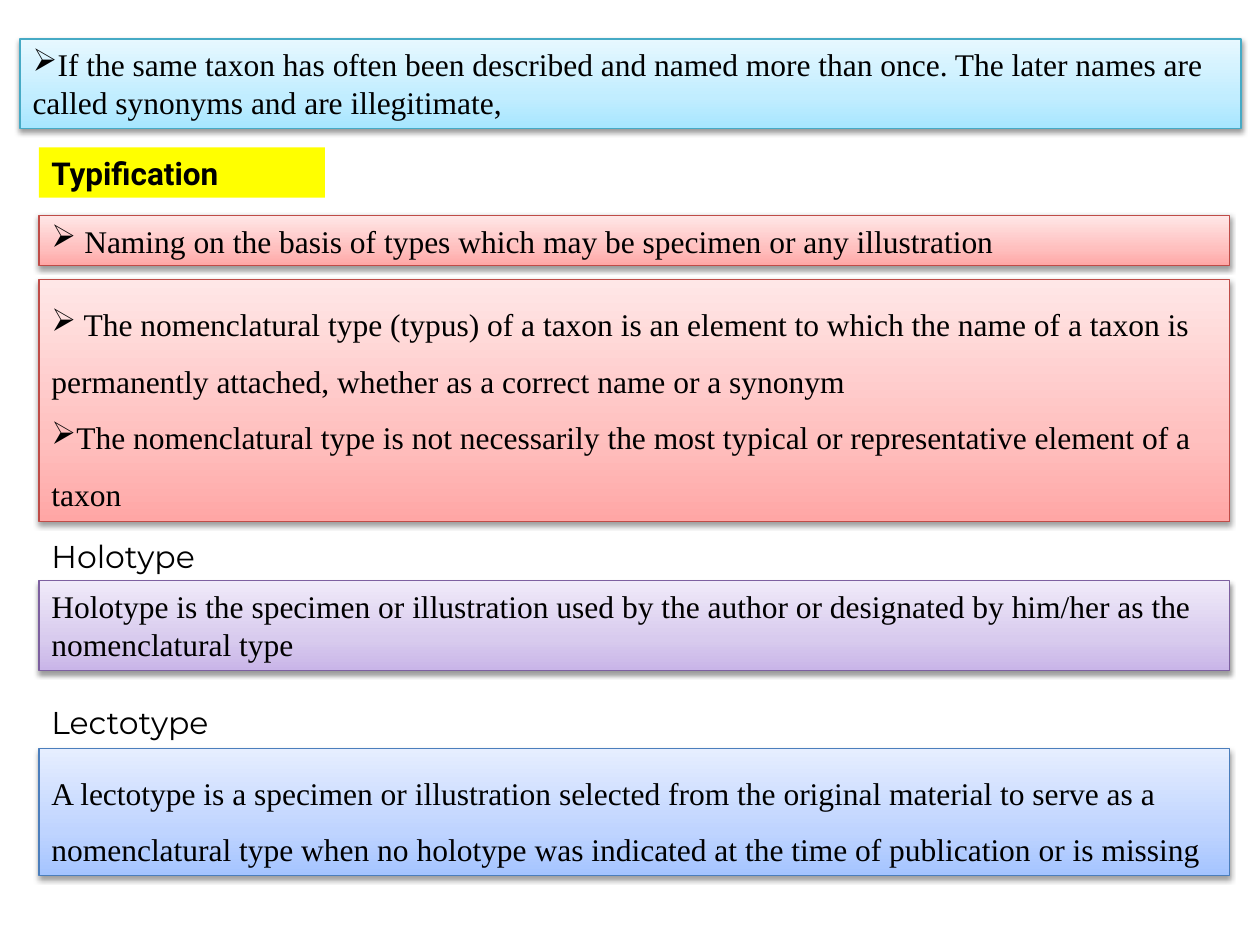
from copy import deepcopy

from lxml import etree
from pptx import Presentation
from pptx.dml.color import RGBColor
from pptx.enum.shapes import MSO_SHAPE
from pptx.enum.text import MSO_ANCHOR, MSO_AUTO_SIZE, PP_ALIGN
from pptx.oxml.ns import qn
from pptx.util import Inches, Pt

RECTANGLE = MSO_SHAPE.RECTANGLE
TOP = MSO_ANCHOR.TOP
LEFT = PP_ALIGN.LEFT
GROW = MSO_AUTO_SIZE.SHAPE_TO_FIT_TEXT

BODY_FONT = "Times New Roman"
HEADING_FONT = "Montserrat"
STOP_POSITIONS = (0, 0.35, 1)
MARGIN = 0.31
BOX_WIDTH = 9.45

CYAN = ("46AAC5", ("A7E6FF", "C1EDFF", "E7F8FF"))
RED = ("BF4C48", ("FFA6A5", "FFC0BF", "FFE7E7"))
PURPLE = ("7D60A0", ("C9B5E8", "D8CBEE", "F0EAF9"))
BLUE = ("4B7EBC", ("A4C4FF", "BFD4FF", "E6EEFF"))


def color(value):
    return RGBColor.from_string(value)


class SlideBuilder:
    text_color = "000000"
    text_size = 18

    def __init__(self, slide):
        self.slide = slide

    def add_text(self, shape, paragraphs, bullet=False, spacing=None, bold=None):
        frame = shape.text_frame
        frame.word_wrap = True
        frame.auto_size = GROW
        frame.vertical_anchor = TOP
        for index, runs in enumerate(paragraphs):
            paragraph = frame.add_paragraph() if index else frame.paragraphs[0]
            paragraph.alignment = LEFT
            if spacing:
                paragraph.line_spacing = spacing
            if bullet:
                properties = paragraph._p.get_or_add_pPr()
                etree.SubElement(properties, qn("a:buChar"), char="➢")
            for text, font_name in runs:
                run = paragraph.add_run()
                run.text = text
                run.font.name = font_name
                run.font.size = Pt(self.text_size)
                run.font.bold = bold
                run.font.color.rgb = color(self.text_color)

    def rectangle(self, left, top, width, height):
        shape = self.slide.shapes.add_shape(
            RECTANGLE, Inches(left), Inches(top), Inches(width), Inches(height))
        shape.shadow.inherit = False
        return shape

    def label(self, text, top, width, height, fill):
        shape = self.rectangle(MARGIN, top, width, height)
        shape.fill.solid()
        shape.fill.fore_color.rgb = color(fill)
        shape.line.fill.background()
        self.add_text(shape, [[(text, "Roboto")]], bold=True)

    def heading(self, text, top):
        shape = self.slide.shapes.add_textbox(
            Inches(MARGIN), Inches(top), Inches(3.13), Inches(0.4))
        self.add_text(shape, [[(text, HEADING_FONT)]])

    def panel(self, top, height, palette, paragraphs, left=MARGIN,
              width=BOX_WIDTH, bullet=False, spacing=None):
        line_color, stop_colors = palette
        shape = self.rectangle(left, top, width, height)
        self.gradient(shape, stop_colors)
        shape.line.color.rgb = color(line_color)
        shape.line.width = Pt(0.75)
        self.drop_shadow(shape)
        self.add_text(shape, paragraphs, bullet, spacing)

    def gradient(self, shape, stop_colors):
        shape.fill.gradient()
        shape.fill.gradient_angle = 90
        stop_list = shape._element.spPr.find(".//" + qn("a:gsLst"))
        stop_list.insert(1, deepcopy(stop_list[0]))
        stops = shape.fill.gradient_stops
        for stop, position, value in zip(stops, STOP_POSITIONS, stop_colors):
            stop.position = position
            stop.color.rgb = color(value)

    def drop_shadow(self, shape):
        effects = shape._element.spPr.find(qn("a:effectLst"))
        shadow = etree.SubElement(
            effects, qn("a:outerShdw"), blurRad="40000", dist="20000",
            dir="5400000", rotWithShape="0")
        shade = etree.SubElement(shadow, qn("a:srgbClr"), val="000000")
        etree.SubElement(shade, qn("a:alpha"), val="38000")


def main():
    presentation = Presentation()
    presentation.slide_width = Inches(10)
    presentation.slide_height = Inches(7.5)
    slide = presentation.slides.add_slide(presentation.slide_layouts[6])
    builder = SlideBuilder(slide)

    builder.label("Typification", 1.17, 2.27, 0.4, "FFFF00")
    builder.panel(1.71, 0.4, RED, [[
        (" Naming on the basis of types which may be specimen or any "
         "illustration", BODY_FONT)]], bullet=True)
    builder.panel(0.31, 0.71, CYAN, [[
        ("If the same taxon has often been described and named more than once. "
         "The later names are called synonyms and are illegitimate,",
         BODY_FONT)]], left=0.16, width=9.69, bullet=True)
    builder.panel(2.22, 1.92, RED, [
        [(" ", "Calibri"),
         ("The nomenclatural type (typus) of a taxon is an element to which "
          "the name of a taxon is permanently attached, whether as a correct "
          "name or a synonym", BODY_FONT)],
        [("The nomenclatural type is not necessarily the most typical or "
          "representative element of a taxon", BODY_FONT)],
    ], bullet=True, spacing=1.5)
    builder.panel(4.61, 0.71, PURPLE, [[
        ("Holotype is the specimen or illustration used by the author or "
         "designated by him/her as the nomenclatural type", BODY_FONT)]])
    builder.heading("Holotype", 4.21)
    builder.panel(5.94, 1.01, BLUE, [[
        ("A lectotype is a specimen or illustration selected from the original "
         "material to serve as a nomenclatural type when no holotype was "
         "indicated at the time of publication or is missing",
         BODY_FONT)]], spacing=1.5)
    builder.heading("Lectotype", 5.53)

    presentation.save("out.pptx")


if __name__ == "__main__":
    main()
